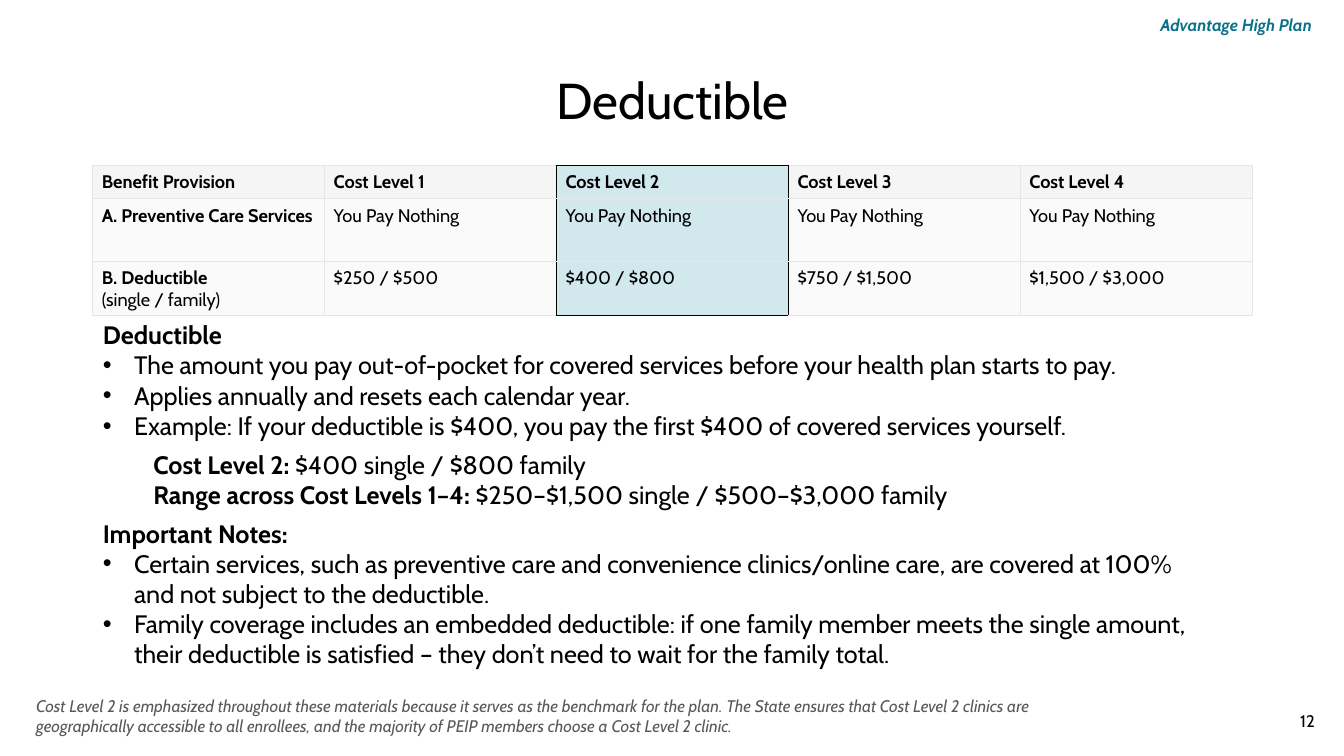
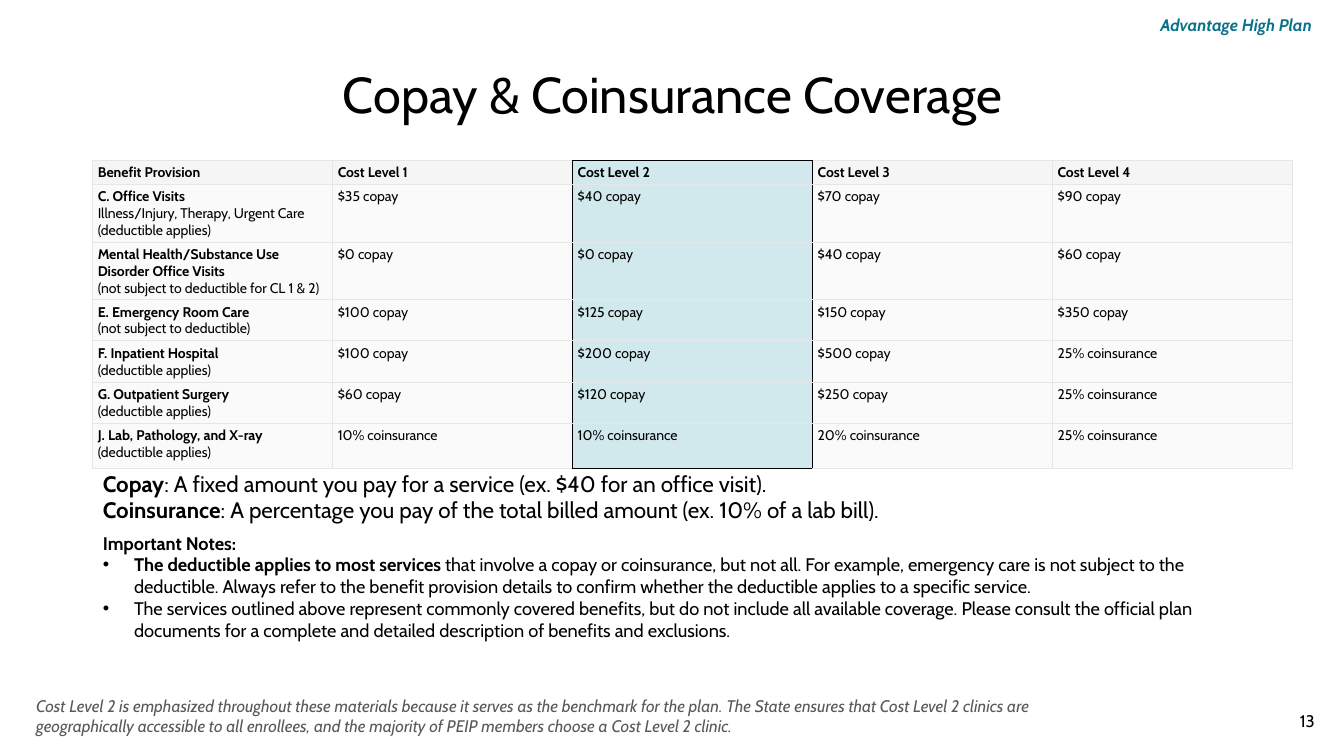
import copy

import pptx
import pptx.dml.color
import pptx.enum.text
import pptx.oxml.ns
import pptx.util
from lxml import etree

Inches = pptx.util.Inches
Pt = pptx.util.Pt
ALIGN = pptx.enum.text.PP_ALIGN
ANCHOR = pptx.enum.text.MSO_ANCHOR
AUTO_SIZE = pptx.enum.text.MSO_AUTO_SIZE

FONT = "Cabin"
BLACK = "000000"
TEAL = "09728A"
GREY = "595959"
HEADER_FILL = "F5F5F5"
ROW_FILL = "FAFAFA"
BENCHMARK_FILL = "D1E8ED"
GRID = ("E6E6E6", 0.75)
FRAME = (BLACK, 1)
BENCHMARK_COLUMN = 2
LEFT = 0.92

PLAN = "Advantage High Plan"
FOOTNOTE = (
    "Cost Level 2 is emphasized throughout these materials because it serves as the "
    "benchmark for the plan. The State ensures that Cost Level 2 clinics are geographically "
    "accessible to all enrollees, and the majority of PEIP members choose a Cost Level 2 clinic."
)
HEADINGS = ["**Benefit Provision**"] + [f"**Cost Level {level}**" for level in range(1, 5)]
INDENTS = {"plain": (0, 0), "bullet": (0.31, -0.31), "inset": (0.5, 0)}

DEDUCTIBLE_ROWS = [
    HEADINGS,
    ["**A. Preventive Care Services**"] + ["You Pay Nothing"] * 4,
    ["**B. Deductible**\n(single / family)",
     "$250 / $500", "$400 / $800", "$750 / $1,500", "$1,500 / $3,000"],
]
DEDUCTIBLE_NOTES = [
    ("plain", 18, 0, "**Deductible**"),
    ("bullet", 18, 0, "The amount you pay out-of-pocket for covered services before your "
                      "health plan starts to pay."),
    ("bullet", 18, 0, "Applies annually and resets each calendar year."),
    ("bullet", 18, 0, "Example: If your deductible is $400, you pay the first $400 of covered "
                      "services yourself."),
    ("inset", 18, 6, "**Cost Level 2:** $400 single / $800 family"),
    ("inset", 18, 0, "**Range across Cost Levels 1–4:** $250–$1,500 single / "
                     "$500–$3,000 family"),
    ("plain", 18, 6, "**Important Notes:**"),
    ("bullet", 18, 0, "Certain services, such as preventive care and convenience "
                      "clinics/online care, are covered at 100% and not subject to the "
                      "deductible."),
    ("bullet", 18, 0, "Family coverage includes an embedded deductible: if one family member "
                      "meets the single amount, their deductible is satisfied – they don’t "
                      "need to wait for the family total."),
]
COPAY_ROWS = [
    HEADINGS,
    ["**C. Office Visits**\nIllness/Injury, Therapy, Urgent Care\n(deductible applies)",
     "$35 copay", "$40 copay", "$70 copay", "$90 copay"],
    ["**Mental Health/Substance Use Disorder Office Visits**\n"
     "(not subject to deductible for CL 1 & 2)",
     "$0 copay", "$0 copay", "$40 copay", "$60 copay"],
    ["**E. Emergency Room Care**\n(not subject to deductible)",
     "$100 copay", "$125 copay", "$150 copay", "$350 copay"],
    ["**F. Inpatient Hospital**\n(deductible applies)",
     "$100 copay", "$200 copay", "$500 copay", "25% coinsurance"],
    ["**G. Outpatient Surgery**\n(deductible applies)",
     "$60 copay", "$120 copay", "$250 copay", "25% coinsurance"],
    ["**J. Lab, Pathology, and X-ray**\n(deductible applies)",
     "10% coinsurance", "10% coinsurance", "20% coinsurance", "25% coinsurance"],
]
COPAY_NOTES = [
    ("plain", 16, 0, "**Copay**: A fixed amount you pay for a service "
                     "(ex. $40 for an office visit)."),
    ("plain", 16, 0, "**Coinsurance**: A percentage you pay of the total billed amount "
                     "(ex. 10% of a lab bill)."),
    ("plain", 13, 6, "**Important Notes:**"),
    ("bullet", 13, 0, "**The deductible applies to most services **that involve a copay or "
                      "coinsurance, but not all. For example, emergency care is not subject to "
                      "the deductible. Always refer to the benefit provision details to confirm "
                      "whether the deductible applies to a specific service."),
    ("bullet", 13, 0, "The services outlined above represent commonly covered benefits, but "
                      "do not include all available coverage. Please consult the official plan "
                      "documents for a complete and detailed description of benefits and "
                      "exclusions."),
]


def rgb(hex_color):
    return pptx.dml.color.RGBColor.from_string(hex_color)


def apply(target, values):
    for name, value in values.items():
        setattr(target, name, value)


def add_element(parent, tag, **attributes):
    return etree.SubElement(parent, pptx.oxml.ns.qn(tag), attributes)


def write(paragraph, text, size, color=BLACK, bold=False, italic=False):
    for part, chunk in enumerate(text.split("**")):
        for line_number, line in enumerate(chunk.split("\n")):
            if line_number:
                line_break = paragraph._p.add_br()
                line_break.append(copy.deepcopy(paragraph.runs[-1]._r.rPr))
            if line:
                run = paragraph.add_run()
                run.text = line
                apply(run.font, {"name": FONT, "size": Pt(size), "italic": italic,
                                 "bold": bold or part % 2 == 1})
                run.font.color.rgb = rgb(color)


def place(shape, left, top, width, height):
    apply(shape, {"left": Inches(left), "top": Inches(top),
                  "width": Inches(width), "height": Inches(height)})


def add_label(slide, box, text, size, align=ALIGN.LEFT, anchor=ANCHOR.TOP, **look):
    frame = slide.shapes.add_textbox(*map(Inches, box)).text_frame
    apply(frame, {"word_wrap": True, "vertical_anchor": anchor})
    frame.paragraphs[0].alignment = align
    write(frame.paragraphs[0], text, size, **look)


def set_title(slide, text, top):
    title = slide.shapes.title
    place(title, LEFT, top, 11.5, 1.45)
    apply(title.text_frame, {"vertical_anchor": ANCHOR.MIDDLE, "auto_size": AUTO_SIZE.NONE})
    paragraph = title.text_frame.paragraphs[0]
    apply(paragraph, {"alignment": ALIGN.CENTER, "line_spacing": 0.9})
    write(paragraph, text, 36)


def set_notes(slide, box, notes):
    body = slide.placeholders[1]
    place(body, *box)
    frame = body.text_frame
    apply(frame, {"word_wrap": True, "auto_size": AUTO_SIZE.NONE,
                  "vertical_anchor": ANCHOR.TOP})
    for index, (kind, size, gap, text) in enumerate(notes):
        paragraph = frame.add_paragraph() if index else frame.paragraphs[0]
        properties = paragraph._p.get_or_add_pPr()
        margin, indent = INDENTS[kind]
        properties.set("marL", str(Inches(margin)))
        properties.set("indent", str(Inches(indent)))
        if kind == "bullet":
            add_element(properties, "a:buFont", typeface="Arial")
            add_element(properties, "a:buChar", char="•")
        else:
            add_element(properties, "a:buNone")
        apply(paragraph, {"level": int(kind == "inset"), "alignment": ALIGN.LEFT,
                          "space_before": Pt(gap), "space_after": Pt(0),
                          "line_spacing": 1.0})
        write(paragraph, text, size)


def set_borders(cell, row, column, last_row):
    framed = column == BENCHMARK_COLUMN
    edges = {
        "L": framed or column == BENCHMARK_COLUMN + 1,
        "R": framed or column == BENCHMARK_COLUMN - 1,
        "T": framed and row == 0,
        "B": framed and row == last_row,
    }
    properties = cell._tc.get_or_add_tcPr()
    for position, (side, strong) in enumerate(edges.items()):
        color, width = FRAME if strong else GRID
        line = etree.Element(pptx.oxml.ns.qn(f"a:ln{side}"), {"w": str(Pt(width))})
        add_element(add_element(line, "a:solidFill"), "a:srgbClr", val=color)
        properties.insert(position, line)


def add_benefits(slide, top, column_width, heights, rows, size, insets):
    columns = len(HEADINGS)
    table = slide.shapes.add_table(
        len(rows), columns, Inches(LEFT), Inches(top),
        Inches(column_width * columns), Inches(sum(heights))).table
    apply(table, {"first_row": False, "horz_banding": False})
    for column in table.columns:
        column.width = Inches(column_width)
    margins = dict(zip(("margin_left", "margin_top", "margin_right", "margin_bottom"),
                       map(Inches, insets)))
    for row, (height, texts) in enumerate(zip(heights, rows)):
        table.rows[row].height = Inches(height)
        for column, text in enumerate(texts):
            cell = table.cell(row, column)
            apply(cell, margins)
            base = ROW_FILL if row else HEADER_FILL
            cell.fill.solid()
            cell.fill.fore_color.rgb = rgb(
                BENCHMARK_FILL if column == BENCHMARK_COLUMN else base)
            set_borders(cell, row, column, len(rows) - 1)
            write(cell.text_frame.paragraphs[0], text, size)


def add_plan_slide(deck, title, title_top, number):
    slide = deck.slides.add_slide(deck.slide_layouts[1])
    set_title(slide, title, title_top)
    add_label(slide, (11.35, 0.1, 1.82, 0.3), PLAN, 12, ALIGN.CENTER,
              color=TEAL, bold=True, italic=True)
    add_label(slide, (0.26, 6.85, 10.27, 0.5), FOOTNOTE, 12, color=GREY, italic=True)
    add_label(slide, (10.14, 6.95, 3, 0.4), str(number), 12, ALIGN.RIGHT, ANCHOR.MIDDLE)
    return slide


def main():
    deck = pptx.Presentation()
    apply(deck, {"slide_width": Inches(13.33), "slide_height": Inches(7.5)})

    deductible = add_plan_slide(deck, "Deductible", 0.3, 12)
    add_benefits(deductible, 1.64, 2.3, [0.33, 0.62, 0.54], DEDUCTIBLE_ROWS, 13,
                 (0.09, 0.06, 0.06, 0.05))
    set_notes(deductible, (LEFT, 3.12, 11.08, 3.9), DEDUCTIBLE_NOTES)

    copay = add_plan_slide(deck, "Copay & Coinsurance Coverage", 0.24, 13)
    add_benefits(copay, 1.59, 2.38, [0.24, 0.57, 0.57, 0.41, 0.41, 0.41, 0.45], COPAY_ROWS,
                 10, (0.05, 0.04, 0.04, 0.03))
    set_notes(copay, (LEFT, 4.61, 11.22, 2.12), COPAY_NOTES)

    deck.save("out.pptx")


if __name__ == "__main__":
    main()
